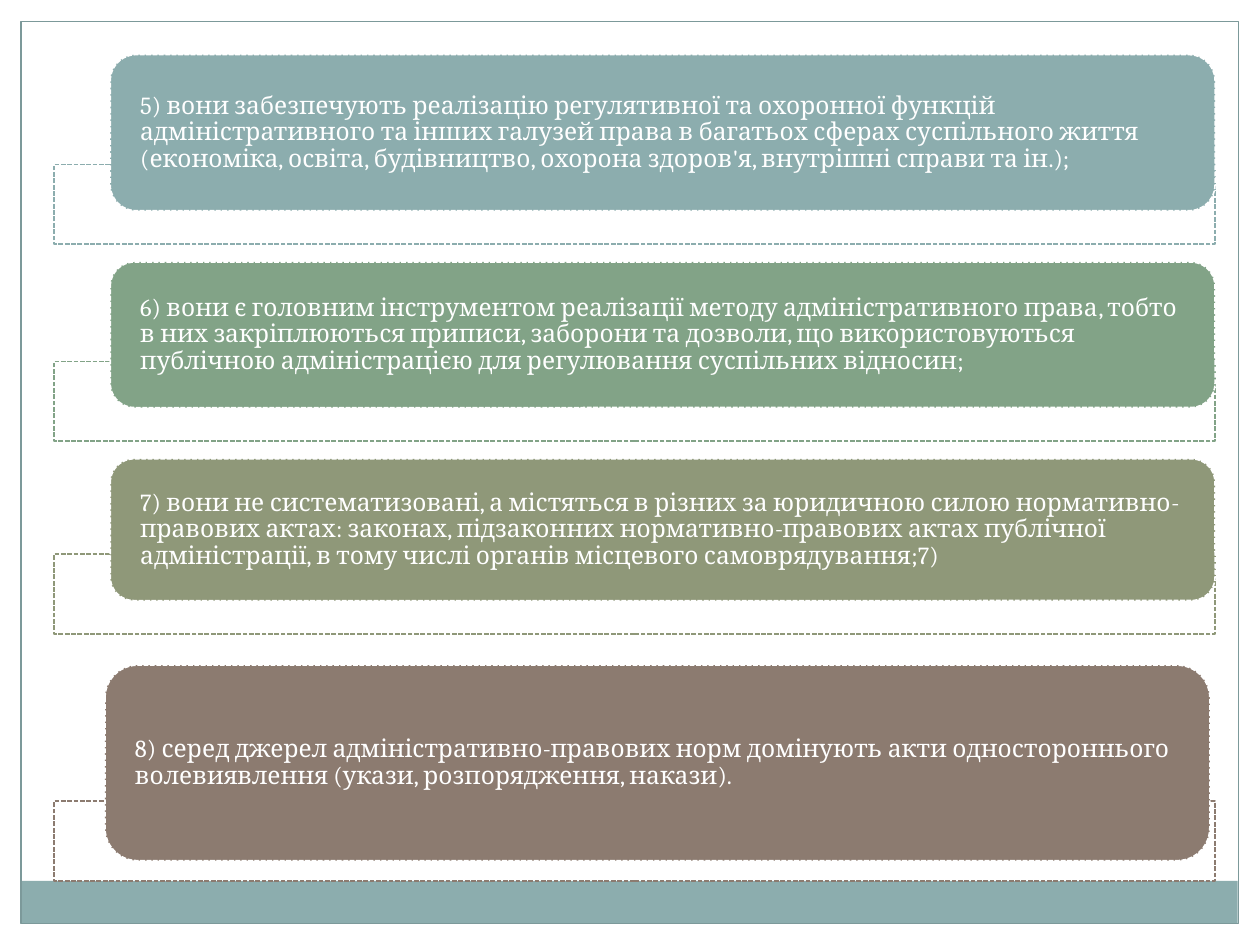
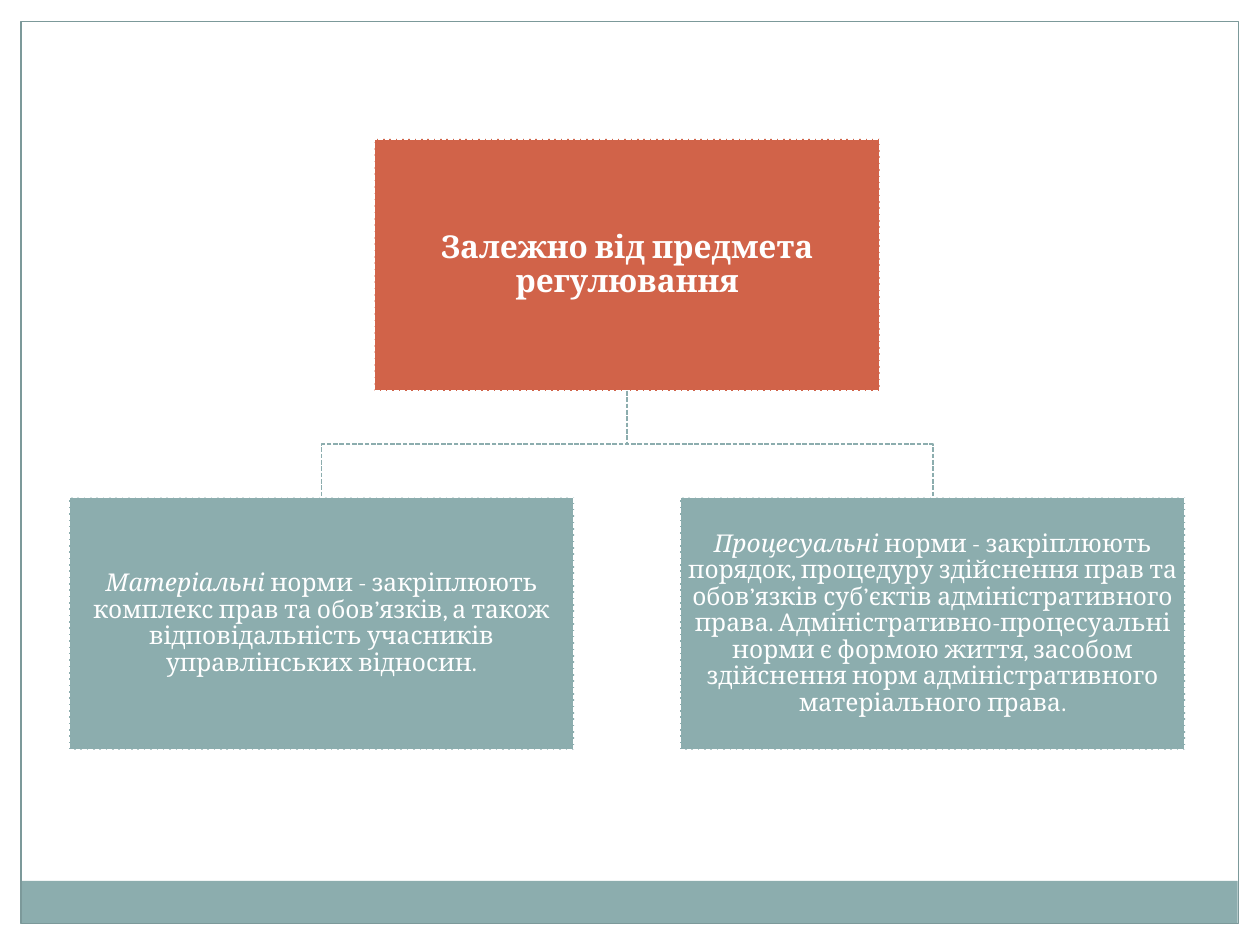
from dataclasses import dataclass

from pptx import Presentation
from pptx.dml.color import RGBColor
from pptx.enum.dml import MSO_LINE
from pptx.enum.shapes import MSO_SHAPE
from pptx.enum.text import MSO_ANCHOR, PP_ALIGN
from pptx.shapes.autoshape import Shape
from pptx.slide import Slide
from pptx.util import Pt

RECTANGLE = MSO_SHAPE.RECTANGLE
ROUNDED = MSO_SHAPE.ROUNDED_RECTANGLE
DASHED = MSO_LINE.SQUARE_DOT
MIDDLE = MSO_ANCHOR.MIDDLE
LEFT, CENTER = PP_ALIGN.LEFT, PP_ALIGN.CENTER

COLORS = {
    "white": "FFFFFF",
    "teal": "8CADAE",
    "frame": "7C999A",
    "green": "82A387",
    "olive": "8F9879",
    "brown": "8C7B70",
    "orange": "D16349",
}
FONT = "Cambria"
DASH_WIDTH = 0.9

# Feature list: a rounded card lying over a dashed panel
PANEL_LEFT, PANEL_WIDTH, PANEL_HEIGHT = 31, 663.3, 45.5
CARD_WIDTH = 631.3
CARD_INSET = 17.2
# Share of its height by which a rounded rectangle already indents its text
CORNER_INSET = 0.05

# Hierarchy: one root box over two branches
BOX_WIDTH, BOX_HEIGHT = 288.6, 144
ROOT_CENTER, ROOT_TOP = 358.4, 79.4
BRANCH_OFFSET, BRANCH_TOP = 174.6, 284.4
BOX_INSET = 0.7


@dataclass(frozen=True)
class Box:
    left: float
    top: float
    width: float
    height: float


@dataclass(frozen=True)
class Feature:
    text: str
    color: str
    panel_top: float
    card_left: float
    card_top: float
    card_height: float


@dataclass(frozen=True)
class Branch:
    term: str
    definition: str
    side: int


FEATURES = [
    Feature(
        "5) вони забезпечують реалізацію регулятивної та охоронної функцій "
        "адміністративного та інших галузей права в багатьох сферах суспільного "
        "життя (економіка, освіта, будівництво, охорона здоров'я, внутрішні "
        "справи та ін.);",
        "teal", 94, 63, 31.2, 89.2),
    Feature(
        "6) вони є головним інструментом реалізації методу адміністративного "
        "права, тобто в них закріплюються приписи, заборони та дозволи, що "
        "використовуються публічною адміністрацією для регулювання суспільних "
        "відносин;",
        "green", 206.5, 63, 149.7, 83.2),
    Feature(
        "7) вони не систематизовані, а містяться в різних за юридичною силою "
        "нормативно-правових актах: законах, підзаконних нормативно-правових "
        "актах публічної адміністрації, в тому числі органів місцевого "
        "самоврядування;7)",
        "olive", 316.7, 63, 262.2, 81),
    Feature(
        "8) серед джерел адміністративно-правових норм домінують акти "
        "одностороннього волевиявлення (укази, розпорядження, накази).",
        "brown", 457.8, 60, 380.1, 111.7),
]

BRANCHES = [
    Branch(
        "Матеріальні",
        " норми - закріплюють комплекс прав та обов’язків, а також "
        "відповідальність учасників управлінських відносин.", -1),
    Branch(
        "Процесуальні",
        " норми - закріплюють порядок, процедуру здійснення прав та обов’язків "
        "суб’єктів адміністративного права. Адміністративно-процесуальні норми "
        "є формою життя, засобом здійснення норм адміністративного "
        "матеріального права.", 1),
]


def rgb(color: str) -> RGBColor:
    return RGBColor.from_string(COLORS[color])


def style_shape(shape: Shape, fill: str | None, line: str | None,
                width: float = DASH_WIDTH, dashed: bool = True) -> None:
    shape.shadow.inherit = False
    if fill:
        shape.fill.solid()
        shape.fill.fore_color.rgb = rgb(fill)
    else:
        shape.fill.background()
    if line:
        shape.line.color.rgb = rgb(line)
        shape.line.width = Pt(width)
        if dashed:
            shape.line.dash_style = DASHED
    else:
        shape.line.fill.background()


def add_box(slide: Slide, box: Box, kind: MSO_SHAPE = RECTANGLE) -> Shape:
    return slide.shapes.add_shape(
        kind, Pt(box.left), Pt(box.top), Pt(box.width), Pt(box.height))


def write_text(shape: Shape, texts: list[str], size: float, align: PP_ALIGN,
               side_inset: float, edge_inset: float) -> None:
    """Fill the shape with one paragraph holding a run for each text."""
    frame = shape.text_frame
    frame.word_wrap = True
    frame.vertical_anchor = MIDDLE
    frame.margin_left = frame.margin_right = Pt(side_inset)
    frame.margin_top = frame.margin_bottom = Pt(edge_inset)
    paragraph = frame.paragraphs[0]
    paragraph.alignment = align
    paragraph.line_spacing = 0.9
    for text in texts:
        run = paragraph.add_run()
        run.text = text
        run.font.name = FONT
        run.font.size = Pt(size)
        run.font.color.rgb = rgb("white")


def add_framed_slide(presentation: Presentation) -> Slide:
    """Add a blank slide with the bottom band and the thin border."""
    slide = presentation.slides.add_slide(presentation.slide_layouts[6])
    band = add_box(slide, Box(11.8, 503.3, 695.5, 24.4))
    style_shape(band, "teal", None)
    border = add_box(slide, Box(12, 12.2, 695.6, 515.6))
    style_shape(border, None, "frame", 0.75, dashed=False)
    return slide


def add_feature(slide: Slide, feature: Feature) -> None:
    panel = add_box(slide, Box(PANEL_LEFT, feature.panel_top,
                               PANEL_WIDTH, PANEL_HEIGHT))
    style_shape(panel, "white", feature.color)
    card = add_box(slide, Box(feature.card_left, feature.card_top,
                              CARD_WIDTH, feature.card_height), ROUNDED)
    style_shape(card, feature.color, "white")
    inset = CARD_INSET - CORNER_INSET * feature.card_height
    write_text(card, [feature.text], 14, LEFT, inset, 0)


def add_elbow(slide: Slide, end_x: float) -> None:
    """Draw the dashed line from the root box down to a branch."""
    start_y = ROOT_TOP + BOX_HEIGHT
    middle_y = (start_y + BRANCH_TOP) / 2
    builder = slide.shapes.build_freeform(Pt(ROOT_CENTER), Pt(start_y))
    corners = [(ROOT_CENTER, middle_y), (end_x, middle_y), (end_x, BRANCH_TOP)]
    builder.add_line_segments([(Pt(x), Pt(y)) for x, y in corners], close=False)
    style_shape(builder.convert_to_shape(), None, "teal")


def add_node(slide: Slide, center: float, top: float, color: str,
             texts: list[str], size: float) -> Shape:
    node = add_box(slide, Box(center - BOX_WIDTH / 2, top, BOX_WIDTH, BOX_HEIGHT))
    style_shape(node, color, "white")
    write_text(node, texts, size, CENTER, BOX_INSET, BOX_INSET)
    return node


def build_features_slide(presentation: Presentation) -> None:
    slide = add_framed_slide(presentation)
    for feature in FEATURES:
        add_feature(slide, feature)


def build_hierarchy_slide(presentation: Presentation) -> None:
    slide = add_framed_slide(presentation)
    root = add_node(slide, ROOT_CENTER, ROOT_TOP, "orange",
                    ["Залежно від предмета регулювання"], 18)
    root.text_frame.paragraphs[0].runs[0].font.bold = True
    for branch in BRANCHES:
        center = ROOT_CENTER + branch.side * BRANCH_OFFSET
        add_elbow(slide, center)
        node = add_node(slide, center, BRANCH_TOP, "teal",
                        [branch.term, branch.definition], 14)
        node.text_frame.paragraphs[0].runs[0].font.italic = True


def main() -> None:
    presentation = Presentation()
    presentation.slide_width = Pt(720)
    presentation.slide_height = Pt(540)
    build_features_slide(presentation)
    build_hierarchy_slide(presentation)
    presentation.save("out.pptx")


if __name__ == "__main__":
    main()
